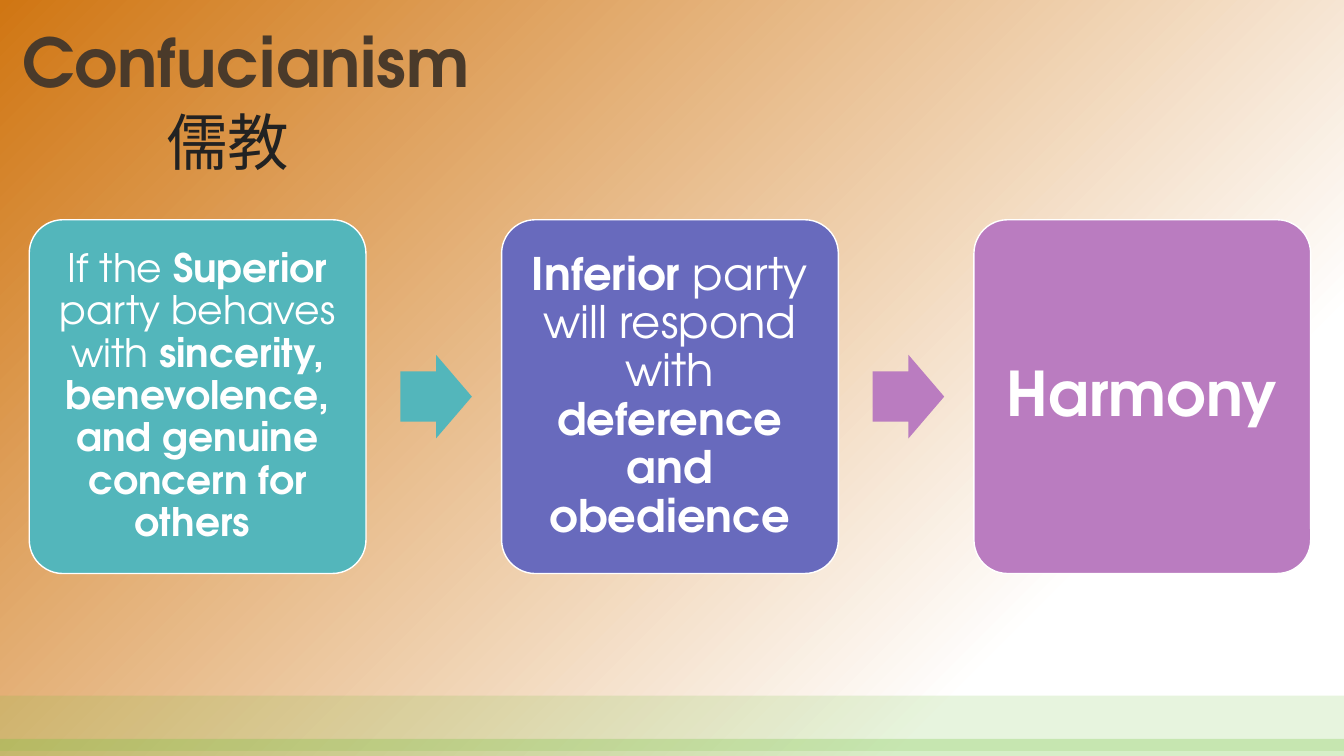
import pptx
import pptx.dml.color
import pptx.enum.shapes
import pptx.enum.text
import pptx.oxml
import pptx.oxml.ns
import pptx.util

PX = 9144  # EMU per px, 100 px to the inch
SLIDE_W, SLIDE_H = 1333, 750
HEADING_FONT = "TeX Gyre Adventor"
WHITE = "FFFFFF"
TEAL, INDIGO, ORCHID = "53B6BB", "686ABD", "BA7CC0"
GRASS = "72C23C"

CARD_LEFT, CARD_TOP, CARD_W, CARD_H, CARD_STEP = 29, 218, 334, 351, 468.5
ARROW_OFFSET, ARROW_W, ARROW_H = 368, 71, 83

# Card colour, text size, inset, runs of (text, bold)
STEPS = [
    (TEAL, 28, 12, [("If the ", False), ("Superior ", True),
                    ("party behaves with ", False),
                    ("sincerity, benevolence, and genuine concern for others ", True)]),
    (INDIGO, 32, 13, [("Inferior ", True), ("party will respond with ", False),
                      ("deference and obedience", True)]),
    (ORCHID, 44, 18, [("Harmony", True)]),
]
ARROW_COLOURS = [TEAL, ORCHID]


def px(length):
    return pptx.util.Emu(round(length * PX))


def colour(hex_string):
    return pptx.dml.color.RGBColor.from_string(hex_string)


def paint_background(slide):
    fill = slide.background.fill
    fill.gradient()
    fill.gradient_angle = 315  # counter-clockwise: runs to the bottom right
    for stop, position, shade in zip(fill.gradient_stops, (0, 0.79), ("D07613", WHITE)):
        stop.position = position
        stop.color.rgb = colour(shade)


def add_block(slide, kind, box, fill, outline=None, adjustments=()):
    block = slide.shapes.add_shape(kind, *map(px, box))
    block.shadow.inherit = False
    block.fill.solid()
    block.fill.fore_color.rgb = colour(fill)
    if outline:
        block.line.color.rgb = colour(outline)
        block.line.width = pptx.util.Pt(1)
    else:
        block.line.fill.background()
    for index, value in enumerate(adjustments):
        block.adjustments[index] = value
    return block


def add_ground_band(slide, top, height, opacity):
    """Add a full-width translucent band; opacity is in percent."""
    band = add_block(slide, pptx.enum.shapes.MSO_SHAPE.RECTANGLE,
                     (0, top, SLIDE_W, height), GRASS)
    for tint in band.fill._xPr.iter(pptx.oxml.ns.qn("a:srgbClr")):
        alpha = pptx.oxml.parse_xml(
            f'<a:alpha {pptx.oxml.ns.nsdecls("a")} val="{opacity * 1000}"/>')
        tint.append(alpha)


def write_runs(paragraph, runs, size, font, shade):
    for text, bold in runs:
        run = paragraph.add_run()
        run.text = text
        run.font.name = font
        run.font.size = pptx.util.Pt(size)
        run.font.bold = bold
        run.font.color.rgb = colour(shade)


def add_label(slide, box, text, size, font, shade, bold=False):
    frame = slide.shapes.add_textbox(*map(px, box)).text_frame
    frame.word_wrap = True
    write_runs(frame.paragraphs[0], [(text, bold)], size, font, shade)
    return frame


def add_card(slide, left, fill, size, inset, runs):
    card = add_block(slide, pptx.enum.shapes.MSO_SHAPE.ROUNDED_RECTANGLE,
                     (left, CARD_TOP, CARD_W, CARD_H), fill, WHITE, (0.1,))
    frame = card.text_frame
    frame.word_wrap = True
    frame.vertical_anchor = pptx.enum.text.MSO_ANCHOR.MIDDLE
    frame.margin_left = frame.margin_right = px(inset)
    frame.margin_top = frame.margin_bottom = px(inset)
    statement = frame.paragraphs[0]
    statement.alignment = pptx.enum.text.PP_ALIGN.CENTER
    statement.line_spacing = 0.9
    write_runs(statement, runs, size, HEADING_FONT, WHITE)


def add_arrow(slide, left, fill):
    top = CARD_TOP + (CARD_H - ARROW_H) / 2
    add_block(slide, pptx.enum.shapes.MSO_SHAPE.RIGHT_ARROW,
              (left, top, ARROW_W, ARROW_H), fill, adjustments=(0.6, 0.5))


def main():
    deck = pptx.Presentation()
    deck.slide_width, deck.slide_height = px(SLIDE_W), px(SLIDE_H)
    slide = deck.slides.add_slide(deck.slide_layouts[6])

    paint_background(slide)
    add_ground_band(slide, 690, 55, 17)
    add_ground_band(slide, 733, 17, 28)

    heading = add_label(slide, (12, -13, 479, 119), "Confucianism", 48,
                        HEADING_FONT, "4A3A2A", bold=True)
    heading.vertical_anchor = pptx.enum.text.MSO_ANCHOR.BOTTOM
    heading.paragraphs[0].line_spacing = 0.9
    chinese_name = add_label(slide, (155, 98, 155, 84), "儒教", 44, "Arial", "222222")
    chinese_name.auto_size = pptx.enum.text.MSO_AUTO_SIZE.SHAPE_TO_FIT_TEXT

    for index, step in enumerate(STEPS):
        left = CARD_LEFT + index * CARD_STEP
        add_card(slide, left, *step)
        if index < len(ARROW_COLOURS):
            add_arrow(slide, left + ARROW_OFFSET, ARROW_COLOURS[index])

    deck.save("out.pptx")


if __name__ == "__main__":
    main()
